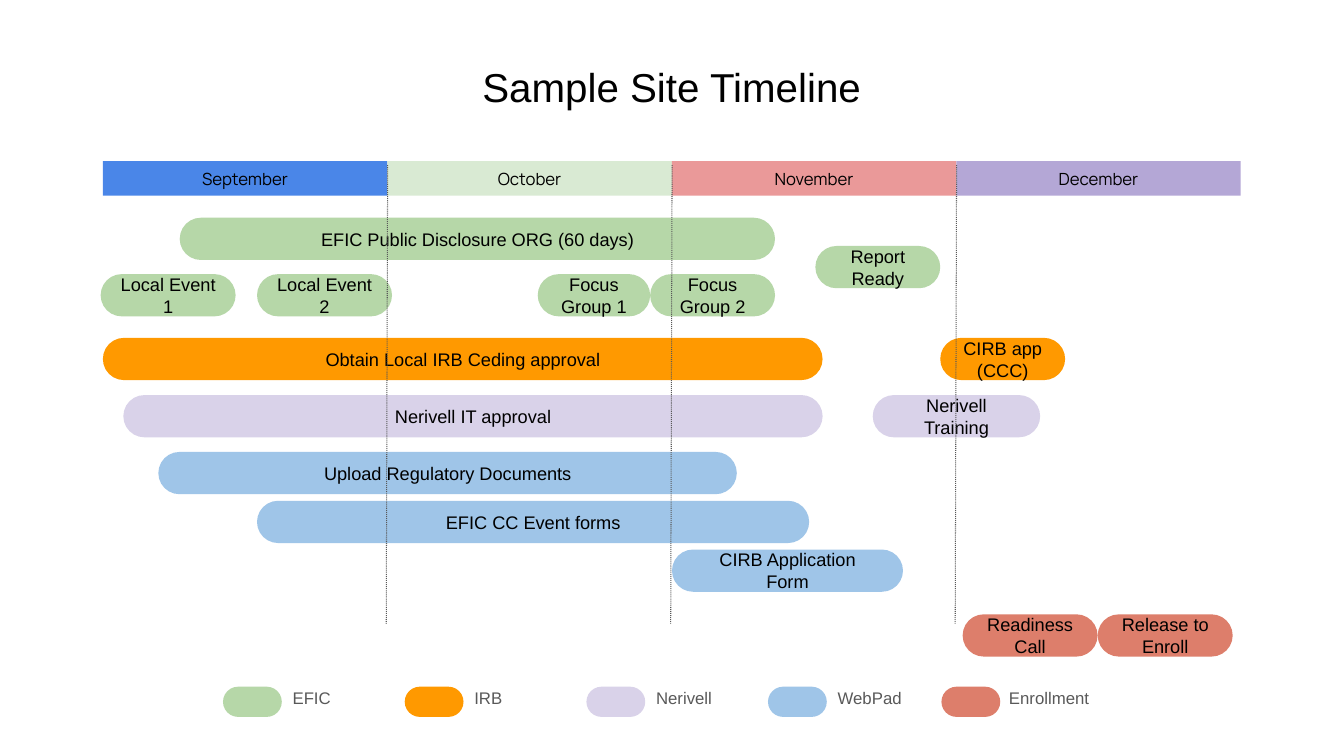
from lxml import etree
from pptx import Presentation
from pptx.dml.color import RGBColor
from pptx.enum.dml import MSO_LINE
from pptx.enum.shapes import MSO_CONNECTOR, MSO_SHAPE
from pptx.enum.text import MSO_ANCHOR, PP_ALIGN
from pptx.oxml.ns import qn
from pptx.util import Pt

ROUNDED = MSO_SHAPE.ROUNDED_RECTANGLE
STRAIGHT = MSO_CONNECTOR.STRAIGHT
DOTTED = MSO_LINE.ROUND_DOT
TOP, MIDDLE, BOTTOM = MSO_ANCHOR.TOP, MSO_ANCHOR.MIDDLE, MSO_ANCHOR.BOTTOM
LEFT, CENTER = PP_ALIGN.LEFT, PP_ALIGN.CENTER

BLACK = RGBColor(0x00, 0x00, 0x00)
GRAY = RGBColor(0x59, 0x59, 0x59)
GREEN = RGBColor(0xB6, 0xD7, 0xA8)
ORANGE = RGBColor(0xFF, 0x99, 0x00)
LILAC = RGBColor(0xD9, 0xD2, 0xE9)
SKY = RGBColor(0x9F, 0xC5, 0xE8)
RED = RGBColor(0xDD, 0x7E, 0x6B)

INSET = 9.36
MONTH_LEFT, MONTH_TOP, MONTH_WIDTH, MONTH_HEIGHT = 73.5, 115.2, 203.2, 24.5
BAR_HEIGHT = 30.2
LEGEND_TOP = 490.5

MONTHS = [
    ("September", RGBColor(0x4A, 0x86, 0xE8)),
    ("October", RGBColor(0xD9, 0xEA, 0xD3)),
    ("November", RGBColor(0xEA, 0x99, 0x99)),
    ("December", RGBColor(0xB4, 0xA7, 0xD6)),
]

# Each row: top, then tasks as (left, width, colour, lines of text)
TASK_ROWS = [
    (155.5, [(128.4, 425.2, GREEN, ["EFIC Public Disclosure ORG (60 days)"])]),
    (175.7, [(582.4, 89.2, GREEN, ["Report Ready"])]),
    (195.8, [(71.9, 96.4, GREEN, ["Local Event 1"]),
             (183.6, 96.4, GREEN, ["Local Event 2"]),
             (384.1, 80.3, GREEN, ["Focus Group 1"]),
             (464.4, 89.2, GREEN, ["Focus Group 2"])]),
    (241.3, [(73.5, 514.1, ORANGE, ["Obtain Local IRB Ceding approval"]),
             (671.6, 89.2, ORANGE, ["CIRB app (CCC)"])]),
    (282.2, [(88.1, 499.5, LILAC, ["Nerivell IT approval"]),
             (623.4, 119.6, LILAC, ["Nerivell Training"])]),
    (322.8, [(113.1, 413.2, SKY, ["Upload Regulatory Documents"])]),
    (357.7, [(183.6, 394.4, SKY, ["EFIC CC Event forms"])]),
    (392.5, [(480, 165, SKY, ["CIRB Application", "Form"])]),
    (438.8, [(687.6, 96.4, RED, ["Readiness Call"]),
             (784.1, 96.4, RED, ["Release to Enroll"])]),
]

# Legend entries: left, label gap, colour, label
LEGEND = [
    (159.3, 49.7, GREEN, "EFIC"),
    (289.1, 49.7, ORANGE, "IRB"),
    (418.9, 49.7, LILAC, "Nerivell"),
    (548.6, 49.7, SKY, "WebPad"),
    (672.5, 48.2, RED, "Enrollment"),
]


def write_text(frame, lines, size, color=BLACK, font="Arial", align=CENTER,
               anchor=MIDDLE, inset=INSET, spacing=None):
    frame.word_wrap = True
    frame.vertical_anchor = anchor
    frame.margin_left = frame.margin_right = Pt(inset)
    frame.margin_top = frame.margin_bottom = Pt(inset)
    for index, line in enumerate(lines):
        paragraph = frame.add_paragraph() if index else frame.paragraphs[0]
        paragraph.alignment = align
        if spacing:
            paragraph.line_spacing = spacing
        run = paragraph.add_run()
        run.text = line
        run.font.size = Pt(size)
        run.font.name = font
        run.font.color.rgb = color


def add_label(slide, left, top, width, height, text, size, **style):
    label = slide.shapes.add_textbox(Pt(left), Pt(top), Pt(width), Pt(height))
    write_text(label.text_frame, [text], size, **style)


def add_block(slide, left, top, width, height, color, rounding=0.5):
    block = slide.shapes.add_shape(ROUNDED, Pt(left), Pt(top), Pt(width), Pt(height))
    block.adjustments[0] = rounding
    block.shadow.inherit = False
    block.fill.solid()
    block.fill.fore_color.rgb = color
    block.line.fill.background()
    return block


def add_divider(slide, top_x, bottom_x):
    divider = slide.shapes.add_connector(STRAIGHT, Pt(top_x), Pt(118), Pt(bottom_x), Pt(445.7))
    divider.line.color.rgb = GRAY
    divider.line.width = Pt(0.75)
    divider.line.dash_style = DOTTED
    etree.SubElement(divider._element.spPr, qn("a:effectLst"))


def main():
    prs = Presentation()
    prs.slide_width, prs.slide_height = Pt(960), Pt(540)
    slide = prs.slides.add_slide(prs.slide_layouts[6])

    # Title
    add_label(slide, 249.8, 43.2, 460, 45.4, "Sample Site Timeline", 28.8,
              anchor=BOTTOM, spacing=0.9)

    # Month header
    for index, (month, color) in enumerate(MONTHS):
        header = add_block(slide, MONTH_LEFT + index * MONTH_WIDTH, MONTH_TOP,
                           MONTH_WIDTH, MONTH_HEIGHT, color, rounding=0)
        write_text(header.text_frame, [month], 12, font="Manrope")

    # Task bars
    for top, tasks in TASK_ROWS:
        for left, width, color, lines in tasks:
            task = add_block(slide, left, top, width, BAR_HEIGHT, color)
            write_text(task.text_frame, lines, 13)

    # Dotted month dividers, leaning slightly left
    for index in range(1, len(MONTHS)):
        boundary = MONTH_LEFT + index * MONTH_WIDTH
        add_divider(slide, boundary + 0.2, boundary - 0.8)

    # Legend
    for left, gap, color, name in LEGEND:
        add_block(slide, left, LEGEND_TOP, 42, 21.6, color)
        add_label(slide, left + gap, LEGEND_TOP + 0.7, 79.9, 20.2, name, 12,
                  color=GRAY, align=LEFT, anchor=TOP, inset=0)

    prs.save("out.pptx")


if __name__ == "__main__":
    main()
